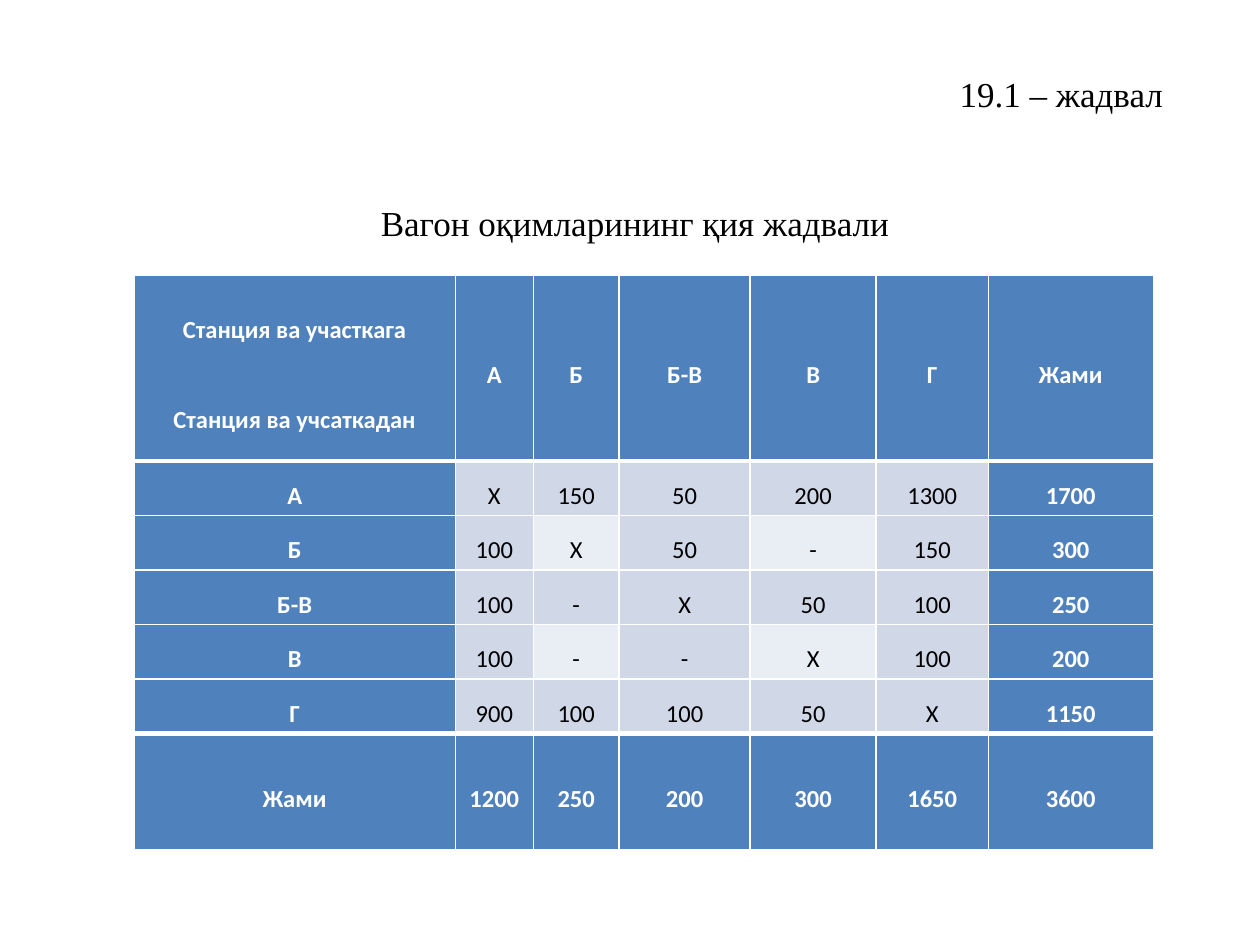
from dataclasses import dataclass

from lxml.etree import SubElement
from pptx import Presentation
from pptx.dml.color import RGBColor
from pptx.enum.text import MSO_ANCHOR, MSO_AUTO_SIZE, PP_ALIGN
from pptx.oxml.ns import qn
from pptx.util import Pt

COLORS = {
    "accent": "4F81BD",
    "dark_band": "D0D8E8",
    "light_band": "E9EDF4",
    "white": "FFFFFF",
    "black": "000000",
}
STATIONS = ["А", "Б", "Б-В", "В", "Г", "Жами"]
FLOWS = [
    ["Х", "150", "50", "200", "1300", "1700"],
    ["100", "Х", "50", "-", "150", "300"],
    ["100", "-", "Х", "50", "100", "250"],
    ["100", "-", "-", "Х", "100", "200"],
    ["900", "100", "100", "50", "Х", "1150"],
    ["1200", "250", "200", "300", "1650", "3600"],
]
CORNER = "Станция ва участкага\nСтанция ва учсаткадан"
COLUMN_WIDTHS = [183.6, 44.6, 49, 74.9, 72, 64.1, 94.3]
ROW_HEIGHTS = [106.5] + [31.14] * 5 + [66.2]
LAST_ROW = len(ROW_HEIGHTS) - 1
LAST_COLUMN = len(COLUMN_WIDTHS) - 1


@dataclass(frozen=True)
class TextStyle:
    font: str
    size: float
    color: str
    bold: bool = False
    gap: float = 0


TITLE = TextStyle("Times New Roman", 20, "black", gap=37.5)
HEADING = TextStyle("Calibri", 14, "white", bold=True, gap=25.7)
BODY = TextStyle("Calibri", 14, "black")


def rgb(name: str) -> RGBColor:
    return RGBColor.from_string(COLORS[name])


def write_text(frame, text: str, style: TextStyle) -> None:
    frame.text = text
    for index, para in enumerate(frame.paragraphs):
        para.alignment = PP_ALIGN.CENTER
        para.line_spacing = 1.5
        para.space_before = Pt(style.gap if index else 0)
        for span in para.runs:
            span.font.name = style.font
            span.font.size = Pt(style.size)
            span.font.bold = style.bold
            span.font.color.rgb = rgb(style.color)


def draw_borders(cell, row: int) -> None:
    widths = {
        "a:lnL": 1,
        "a:lnR": 1,
        "a:lnT": 3 if row in (1, LAST_ROW) else 1,
        "a:lnB": 3 if row in (0, LAST_ROW - 1) else 1,
    }
    properties = cell._tc.get_or_add_tcPr()
    for tag, width in widths.items():
        line = SubElement(properties, qn(tag), w=str(Pt(width)))
        fill = SubElement(line, qn("a:solidFill"))
        SubElement(fill, qn("a:srgbClr"), val=COLORS["white"])


def draw_cell(cell, text: str, row: int, column: int) -> None:
    heading = row in (0, LAST_ROW) or column in (0, LAST_COLUMN)
    band = "dark_band" if row % 2 or column % 2 else "light_band"
    draw_borders(cell, row)
    cell.fill.solid()
    cell.fill.fore_color.rgb = rgb("accent" if heading else band)
    cell.vertical_anchor = MSO_ANCHOR.MIDDLE
    cell.margin_left = cell.margin_right = Pt(5)
    cell.margin_top = cell.margin_bottom = 0
    write_text(cell.text_frame, text, HEADING if heading else BODY)


def draw_title(page) -> None:
    box = page.shapes.title
    box.left, box.top, box.width, box.height = Pt(54), Pt(26), Pt(617.8), Pt(116.6)
    frame = box.text_frame
    frame.auto_size = MSO_AUTO_SIZE.NONE
    frame.vertical_anchor = MSO_ANCHOR.TOP
    write_text(frame, "19.1 – жадвал\nВагон оқимларининг қия жадвали", TITLE)
    frame.paragraphs[0].alignment = PP_ALIGN.RIGHT


def draw_flow_table(page) -> None:
    rows = [[CORNER, *STATIONS]]
    rows += [[station, *flows] for station, flows in zip(STATIONS, FLOWS)]
    table = page.shapes.add_table(
        len(rows), len(rows[0]), Pt(76.6), Pt(157),
        Pt(sum(COLUMN_WIDTHS)), Pt(sum(ROW_HEIGHTS)),
    ).table
    table.first_row = table.horz_banding = False
    for column, width in zip(table.columns, COLUMN_WIDTHS):
        column.width = Pt(width)
    for row, height in zip(table.rows, ROW_HEIGHTS):
        row.height = Pt(height)
    for row, texts in enumerate(rows):
        for column, text in enumerate(texts):
            draw_cell(table.cell(row, column), text, row, column)


def main() -> None:
    deck = Presentation()
    deck.slide_width, deck.slide_height = Pt(720), Pt(540)
    page = deck.slides.add_slide(deck.slide_layouts.get_by_name("Title Only"))
    draw_title(page)
    draw_flow_table(page)
    deck.save("out.pptx")


if __name__ == "__main__":
    main()
